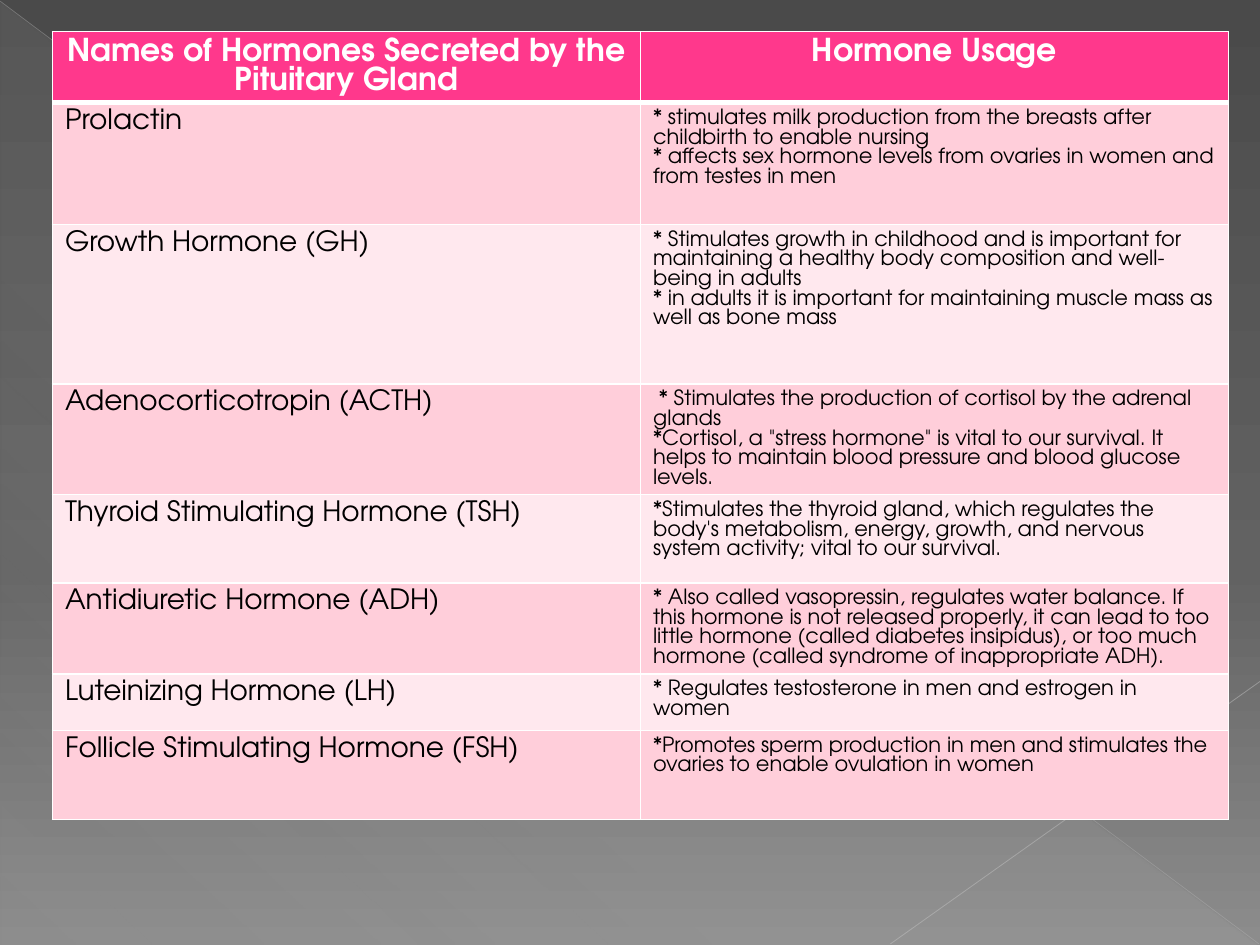
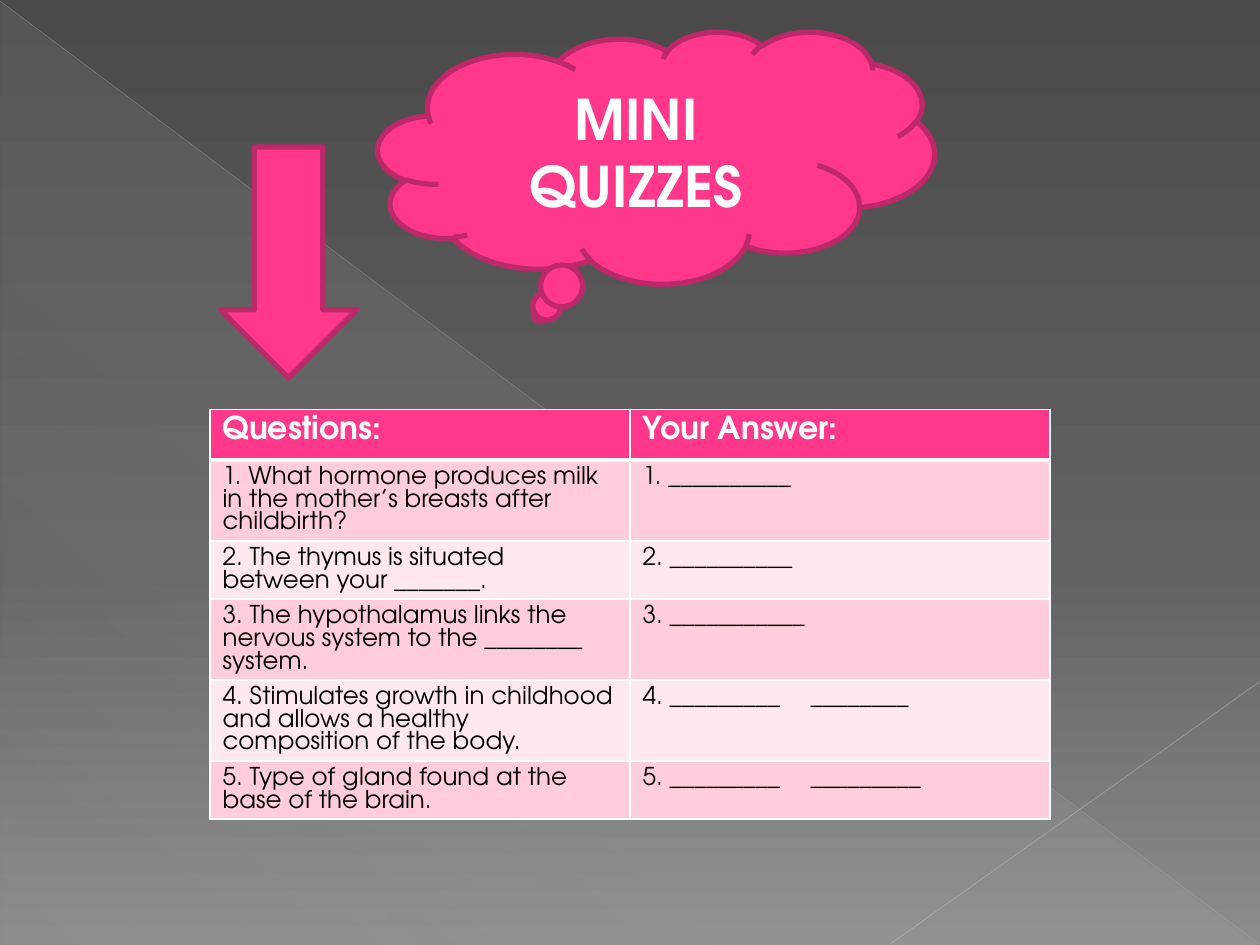
from lxml import etree
from pptx import Presentation
from pptx import util as u
from pptx.dml.color import RGBColor
from pptx.enum import shapes, text
from pptx.oxml.ns import qn

FONT = "TeX Gyre Adventor"
PINK = RGBColor(0xFF, 0x38, 0x8C)
EDGE = RGBColor(0xBD, 0x29, 0x68)
ROSE = RGBColor(0xFF, 0xCE, 0xDA)
BLUSH = RGBColor(0xFF, 0xE8, 0xEE)
WHITE = RGBColor(0xFF, 0xFF, 0xFF)
BLACK = RGBColor(0, 0, 0)
DARK = RGBColor(0x4A, 0x4A, 0x4A)
MID = RGBColor(0x62, 0x62, 0x62)
LIGHT = RGBColor(0x8C, 0x8C, 0x8C)
MIST = RGBColor(0xD2, 0xD2, 0xD2)
RAY = RGBColor(0xBF, 0xBF, 0xBF)
RAY2 = RGBColor(0xC6, 0xC6, 0xC6)

# The slide is a grid of 120 columns and 90 rows of square units
WIDTH, HEIGHT = u.Inches(10), u.Inches(7.5)
UNIT = WIDTH // 120
TIGHT = 0.93  # line pitch in tables, as a share of the text size

HORMONES = [
    ("Names of Hormones Secreted by the Pituitary Gland", "Hormone Usage"),
    ("Prolactin",
     "* stimulates milk production from the breasts after childbirth to enable nursing\n"
     "* affects sex hormone levels from ovaries in women and from testes in men"),
    ("Growth Hormone (GH)",
     "* Stimulates growth in childhood and is important for maintaining a healthy "
     "body composition and well-being in adults\n"
     "* in adults it is important for maintaining muscle mass as well as bone mass"),
    ("Adenocorticotropin (ACTH)",
     " * Stimulates the production of cortisol by the adrenal glands\n"
     "*Cortisol, a \"stress hormone\" is vital to our survival. It helps to maintain "
     "blood pressure and blood glucose levels."),
    ("Thyroid Stimulating Hormone (TSH)",
     "*Stimulates the thyroid gland, which regulates the body's metabolism, energy, "
     "growth, and nervous system activity; vital to our survival."),
    ("Antidiuretic Hormone (ADH)",
     "* Also called vasopressin, regulates water balance. If this hormone is not "
     "released properly, it can lead to too little hormone (called diabetes "
     "insipidus), or too much hormone (called syndrome of inappropriate ADH)."),
    ("Luteinizing Hormone (LH)",
     "* Regulates testosterone in men and estrogen in women"),
    ("Follicle Stimulating Hormone (FSH)",
     "*Promotes sperm production in men and stimulates the ovaries to enable "
     "ovulation in women"),
]
QUIZ = [
    ("Questions:", "Your Answer:"),
    ("1. What hormone produces milk in the mother’s breasts after childbirth?",
     "1. __________"),
    ("2. The thymus is situated between your _______.", "2. __________"),
    ("3. The hypothalamus links the nervous system to the ________ system.",
     "3. ___________"),
    ("4. Stimulates growth in childhood and allows a healthy composition of the body.",
     "4. _________\t________"),
    ("5. Type of gland found at the base of the brain.",
     "5. _________\t_________"),
]


def grid(*marks):
    return [round(mark * UNIT) for mark in marks]


def sub(node, tag, **attrs):
    return etree.SubElement(node, qn(tag), {k: str(v) for k, v in attrs.items()})


def tint(node, color, alpha=100):
    clr = sub(node, "a:srgbClr", val=color)
    if alpha < 100:
        sub(clr, "a:alpha", val=alpha * 1000)


def blend(owner, stops, angle):
    """Swap the solid fill below owner for a gradient."""
    solid = next(owner.iter(qn("a:solidFill")))
    grad = etree.Element(qn("a:gradFill"), rotWithShape="1")
    marks = sub(grad, "a:gsLst")
    for pos, color, alpha in stops:
        tint(sub(marks, "a:gs", pos=pos * 1000), color, alpha)
    sub(grad, "a:lin", ang=angle * 60000, scaled=0)
    solid.getparent().replace(solid, grad)


def write(frame, words, size=14, color=BLACK, bold=False, align=None,
          pitch=None, tab=None):
    frame.word_wrap = True
    for i, line in enumerate(words.split("\n")):
        para = frame.add_paragraph() if i else frame.paragraphs[0]
        para.alignment = align
        if pitch:
            para.line_spacing = u.Pt(round(size * pitch, 1))
        if tab and "\t" in line:
            tabs = sub(para._p.get_or_add_pPr(), "a:tabLst")
            sub(tabs, "a:tab", pos=tab, algn="l")
        run = para.add_run()
        run.text = line
        run.font.name, run.font.size = FONT, u.Pt(size)
        run.font.bold, run.font.color.rgb = bold, color


def shape(slide, kind, box, fill, edge=None):
    item = slide.shapes.add_shape(kind, *box)
    item.shadow.inherit = False
    item.fill.solid()
    item.fill.fore_color.rgb = fill
    if edge:
        item.line.color.rgb, item.line.width = edge, u.Pt(3)
    else:
        item.line.fill.background()
    return item


def ray(slide, ends, color, width, alpha):
    line = slide.shapes.add_connector(shapes.MSO_CONNECTOR.STRAIGHT, *ends)
    line.line.color.rgb, line.line.width = color, u.Pt(width)
    clr = next(line.element.spPr.iter(qn("a:srgbClr")))
    sub(clr, "a:alpha", val=alpha * 1000)
    sub(line.element.spPr, "a:effectLst")


def base(deck):
    """Blank slide with the shared backdrop."""
    slide = deck.slides.add_slide(deck.slide_layouts[6])
    slide.background.fill.solid()
    blend(slide.element.find(".//" + qn("p:bgPr")),
          [(0, DARK, 100), (60, MID, 100), (100, LIGHT, 100)], 90)
    # Pale corner and the two thin rays
    wedge = shape(slide, shapes.MSO_SHAPE.RIGHT_TRIANGLE,
                  grid(0.1, 0.2, 119.8, 89.8), MIST)
    blend(wedge.element.spPr, [(0, MIST, 10), (70, MIST, 8), (100, MIST, 1)], 133)
    ray(slide, grid(0, 0.1, 119.9, 89.9), RAY, 0.39, 35)
    ray(slide, grid(120, 64.9, 84.8, 89.9), RAY2, 0.47, 45)
    return slide


def rule(cell, row):
    """White cell borders, thicker below the heading."""
    props = cell._tc.get_or_add_tcPr()
    wide = {"T": 3 if row == 1 else 1, "B": 3 if row == 0 else 1}
    for i, side in enumerate("LRTB"):
        line = etree.Element(qn("a:ln" + side), w=str(u.Pt(wide.get(side, 1))))
        tint(sub(line, "a:solidFill"), WHITE)
        props.insert(i, line)


def chart(slide, left, top, width, rows, highs, sizes, align=None):
    """Two equal columns with a pink heading and banded rows."""
    frame = slide.shapes.add_table(len(rows), 2, *grid(left, top, width, sum(highs)))
    table = frame.table
    table.horz_banding = table.first_row = False
    for r, (row, high) in enumerate(zip(rows, highs)):
        table.rows[r].height = grid(high)[0]
        for c, words in enumerate(row):
            cell = table.cell(r, c)
            cell.fill.solid()
            cell.fill.fore_color.rgb = (ROSE if r % 2 else BLUSH) if r else PINK
            rule(cell, r)
            if r:
                write(cell.text_frame, words, size=sizes[c], pitch=TIGHT,
                      tab=grid(16)[0])
            else:
                write(cell.text_frame, words, size=18, color=WHITE, bold=True,
                      align=align, pitch=TIGHT)


def cloud(slide, box):
    item = shape(slide, shapes.MSO_SHAPE.CLOUD_CALLOUT, box, PINK, EDGE)
    item.text_frame.vertical_anchor = text.MSO_ANCHOR.MIDDLE
    write(item.text_frame, "MINI QUIZZES", size=32, color=WHITE, bold=True,
          align=text.PP_ALIGN.CENTER)


def main():
    deck = Presentation()
    deck.slide_width, deck.slide_height = WIDTH, HEIGHT

    # Hormones and their use
    slide = base(deck)
    chart(slide, 5, 3, 112, HORMONES, [6.7, 11.6, 15.2, 10.5, 8.4, 8.6, 5.4, 8.5],
          (16, 12), text.PP_ALIGN.CENTER)

    # Quiz
    slide = base(deck)
    cloud(slide, grid(36, 3, 53, 24))
    chart(slide, 20, 39, 80, QUIZ, [4.8, 7.7, 5.5, 7.7, 7.6, 5.5], (14, 14))
    shape(slide, shapes.MSO_SHAPE.DOWN_ARROW, grid(21, 14, 13, 22), PINK, EDGE)

    deck.save("out.pptx")


if __name__ == "__main__":
    main()
